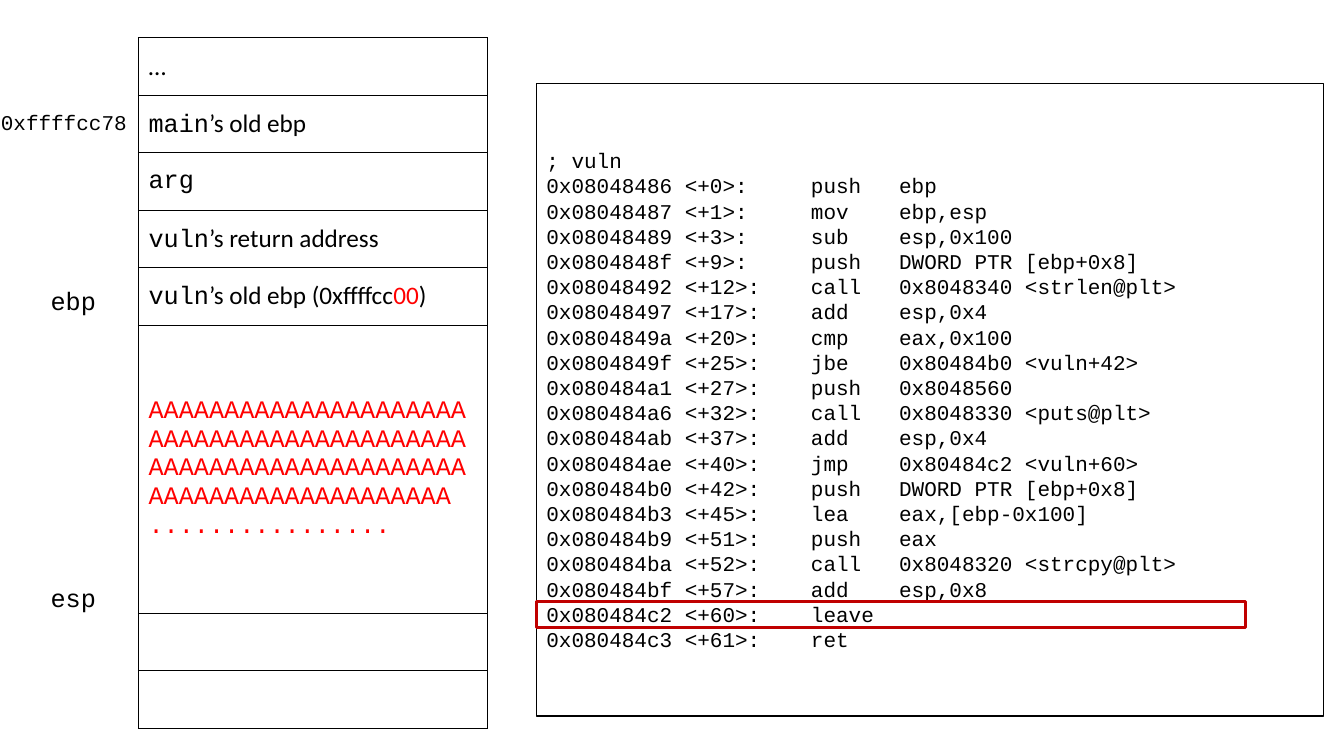
from dataclasses import dataclass

from lxml.etree import SubElement
from pptx import Presentation
from pptx.dml.color import RGBColor
from pptx.enum.shapes import MSO_SHAPE as Shape
from pptx.enum.text import MSO_ANCHOR as Anchor, PP_ALIGN as Align
from pptx.oxml import parse_xml
from pptx.oxml.ns import nsdecls, qn
from pptx.util import Cm, Pt

CODE = [
    ("; vuln",),
    ("0x08048486 <+0>:", "push", "ebp"),
    ("0x08048487 <+1>:", "mov", "ebp,esp"),
    ("0x08048489 <+3>:", "sub", "esp,0x100"),
    ("0x0804848f <+9>:", "push", "DWORD PTR [ebp+0x8]"),
    ("0x08048492 <+12>:", "call", "0x8048340 <strlen@plt>"),
    ("0x08048497 <+17>:", "add", "esp,0x4"),
    ("0x0804849a <+20>:", "cmp", "eax,0x100"),
    ("0x0804849f <+25>:", "jbe", "0x80484b0 <vuln+42>"),
    ("0x080484a1 <+27>:", "push", "0x8048560"),
    ("0x080484a6 <+32>:", "call", "0x8048330 <puts@plt>"),
    ("0x080484ab <+37>:", "add", "esp,0x4"),
    ("0x080484ae <+40>:", "jmp", "0x80484c2 <vuln+60>"),
    ("0x080484b0 <+42>:", "push", "DWORD PTR [ebp+0x8]"),
    ("0x080484b3 <+45>:", "lea", "eax,[ebp-0x100]"),
    ("0x080484b9 <+51>:", "push", "eax"),
    ("0x080484ba <+52>:", "call", "0x8048320 <strcpy@plt>"),
    ("0x080484bf <+57>:", "add", "esp,0x8"),
    ("0x080484c2 <+60>:", "leave"),
    ("0x080484c3 <+61>:", "ret"),
]


@dataclass(frozen=True)
class Theme:
    """Fonts, type sizes and colours of the slide."""
    sans: str = "Calibri"
    mono: str = "Courier New"
    body: int = 18
    small: int = 15
    ink: str = "000000"
    paper: str = "FFFFFF"
    overflow: str = "FF0000"
    marker: str = "C00000"


T = Theme()
SANS = {"name": T.sans}
MONO = {"name": T.mono}
RED = {"color": T.overflow}

STACK = [
    (1, [("…", SANS)]),
    (1, [("main", MONO), ("’s old ebp", SANS)]),
    (1, [("arg", MONO)]),
    (1, [("vuln", MONO), ("’s return address", SANS)]),
    (1, [("vuln", MONO), ("’s old ebp (0xffffcc", SANS), ("00", SANS | RED), (")", SANS)]),
    (5, [("A" * 83 + " " + "." * 16, MONO | RED)]),
    (1, []),
    (1, []),
]
LABELS = [
    ("esp", T.body, (0.84, 14.55, 2.01, 1.02)),
    ("ebp", T.body, (0.84, 7.06, 2.01, 1.02)),
    ("0xffffcc78", T.small, (-0.6, 2.64, 4.42, 0.89)),
]
CODE_BOX = (13.52, 2.11, 19.84, 15.93)
LEAVE_BOX = (13.52, 15.16, 17.86, 0.66)
STACK_LEFT, STACK_TOP, STACK_WIDTH, ROW = 3.49, 0.95, 8.79, 1.45
TAB_CHARS = (21, 28)


def add_run(p, text, size=T.body, color=T.ink, **font):
    """Append a formatted run to a paragraph."""
    r = p.add_run()
    r.text = text
    for key, value in {"size": Pt(size), **font}.items():
        setattr(r.font, key, value)
    r.font.color.rgb = RGBColor.from_string(color)


def add_box(s, place, line, width, fill=None):
    """Add an outlined rectangle."""
    sp = s.shapes.add_shape(Shape.RECTANGLE, *map(Cm, place))
    sp.shadow.inherit = False
    if fill:
        sp.fill.solid()
        sp.fill.fore_color.rgb = RGBColor.from_string(fill)
    else:
        sp.fill.background()
    sp.line.color.rgb = RGBColor.from_string(line)
    sp.line.width = Pt(width)
    return sp


def add_code(s):
    """Add the disassembly with its columns on tab stops."""
    tf = add_box(s, CODE_BOX, T.ink, 1, T.paper).text_frame
    tf.word_wrap = True
    tf.vertical_anchor = Anchor.MIDDLE
    for i, columns in enumerate(CODE):
        p = tf.paragraphs[0] if i == 0 else tf.add_paragraph()
        p.alignment = Align.LEFT
        tabs = SubElement(p._p.get_or_add_pPr(), qn("a:tabLst"))
        for chars in TAB_CHARS:
            stop = Pt(chars * T.small * 0.6)
            SubElement(tabs, qn("a:tab"), pos=str(stop), algn="l")
        add_run(p, "\t".join(columns), T.small, **MONO)


def add_borders(cell):
    """Draw a thin line on all four sides of a cell."""
    tc_pr = cell._tc.get_or_add_tcPr()
    for i, side in enumerate("LRTB"):
        tc_pr.insert(i, parse_xml(
            f'<a:ln{side} {nsdecls("a")} w="{Pt(1)}"><a:solidFill>'
            f'<a:srgbClr val="{T.ink}"/></a:solidFill></a:ln{side}>'))


def add_stack(s):
    """Add the stack frame as a one-column table."""
    height = ROW * sum(units for units, _ in STACK)
    place = map(Cm, (STACK_LEFT, STACK_TOP, STACK_WIDTH, height))
    table = s.shapes.add_table(len(STACK), 1, *place).table
    table.first_row = table.horz_banding = False
    for i, (units, runs) in enumerate(STACK):
        table.rows[i].height = Cm(ROW * units)
        cell = table.cell(i, 0)
        cell.vertical_anchor = Anchor.MIDDLE
        cell.fill.background()
        add_borders(cell)
        for text, font in runs:
            add_run(cell.text_frame.paragraphs[0], text, **font)


def add_label(s, text, size, place):
    """Add a centred label beside the stack."""
    tf = s.shapes.add_textbox(*map(Cm, place)).text_frame
    tf.word_wrap = True
    p = tf.paragraphs[0]
    p.alignment = Align.CENTER
    add_run(p, text, size, **MONO)


def main():
    """Build and save the slide."""
    prs = Presentation()
    prs.slide_width, prs.slide_height = Cm(33.87), Cm(19.05)
    s = prs.slides.add_slide(prs.slide_layouts[6])
    add_code(s)
    add_stack(s)
    add_box(s, LEAVE_BOX, T.marker, 2)
    for label in LABELS:
        add_label(s, *label)
    prs.save("out.pptx")


if __name__ == "__main__":
    main()
